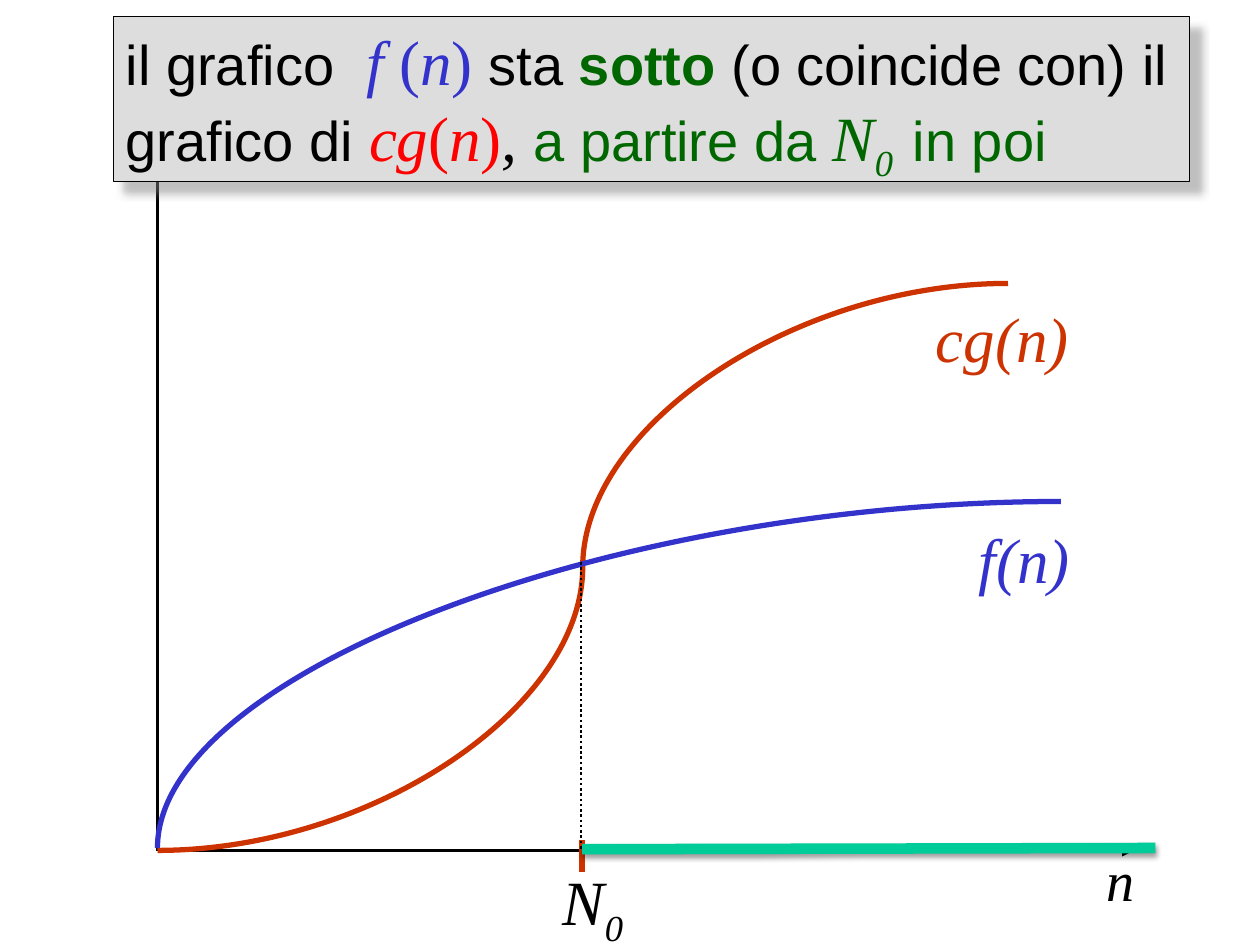
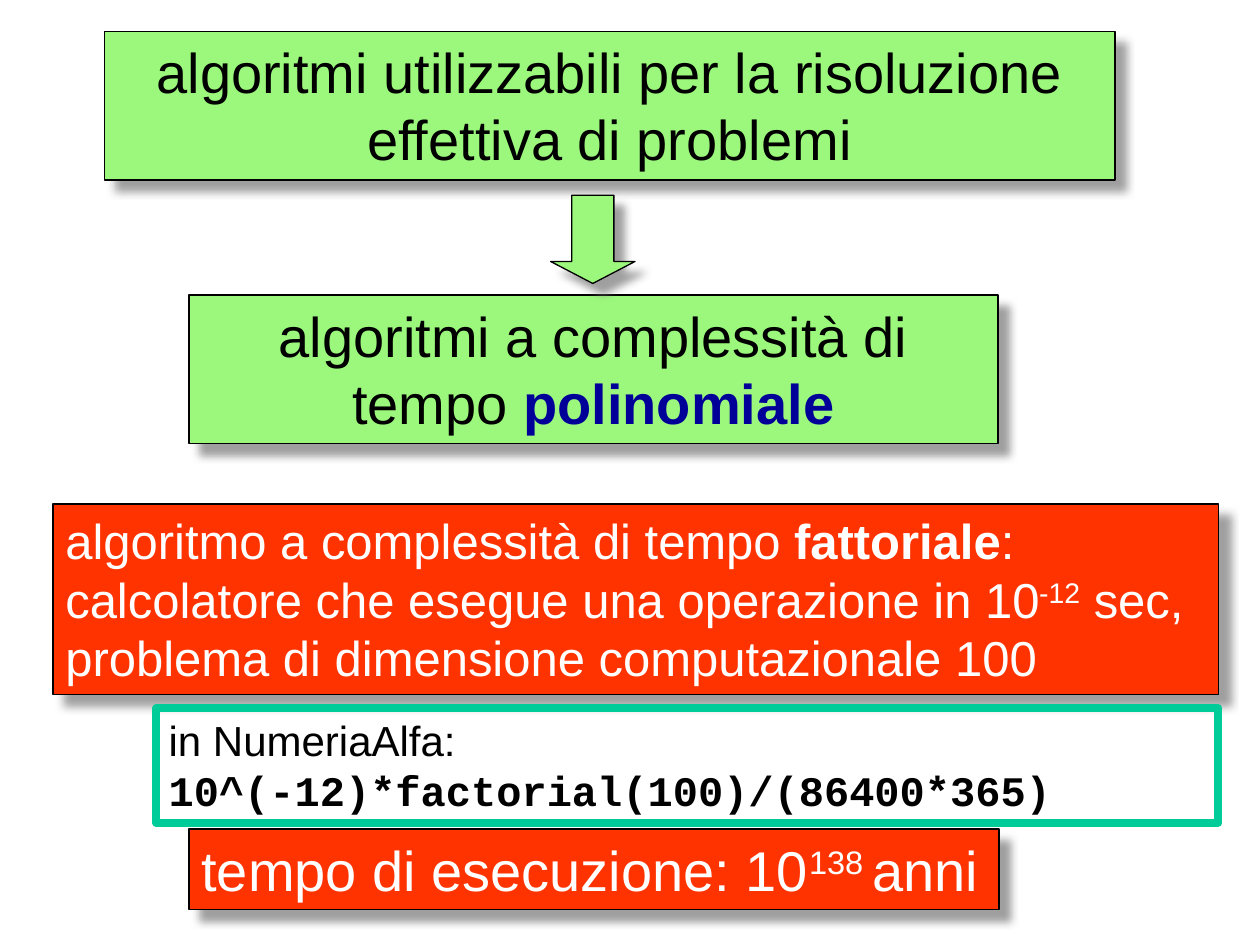
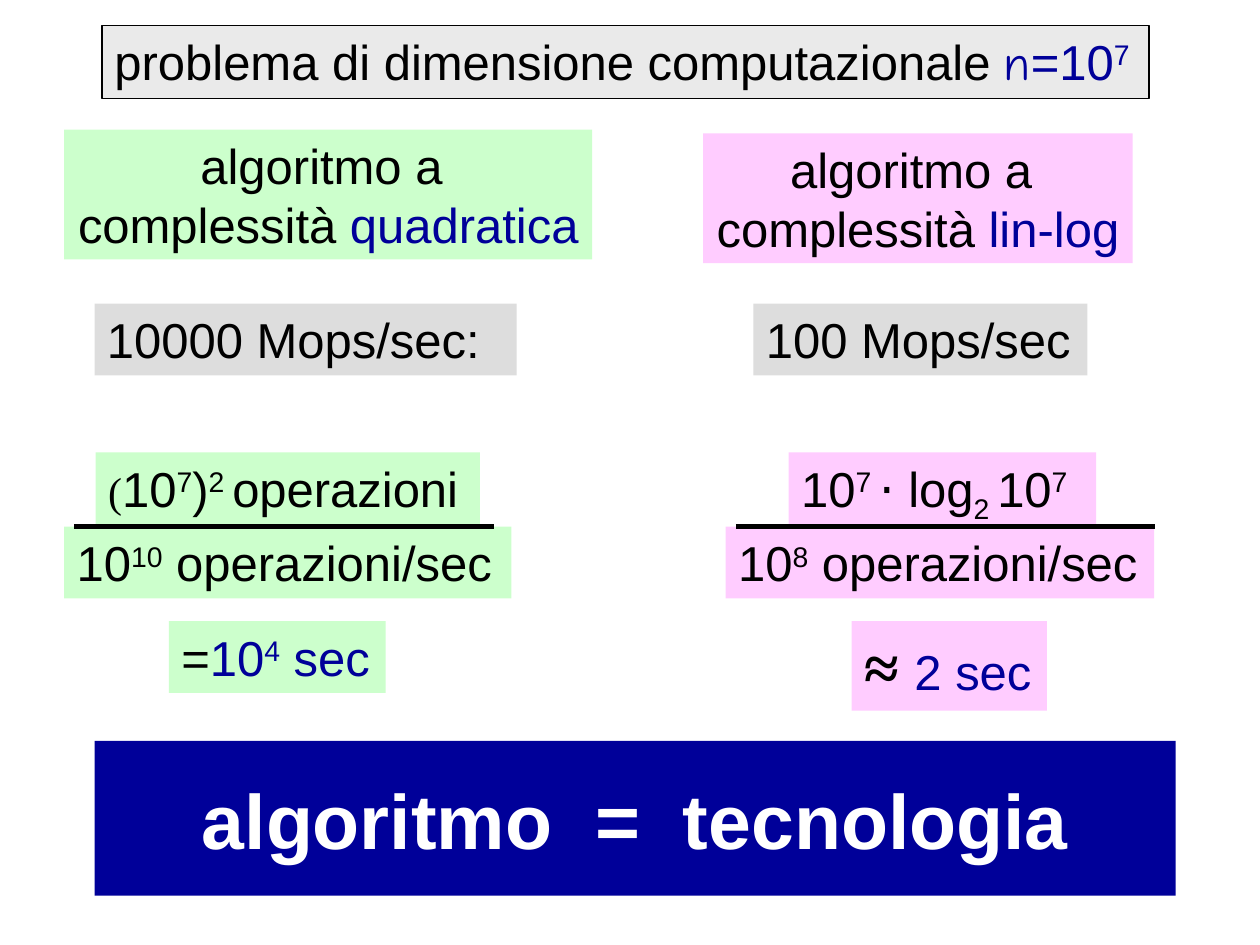
"""Build three slides on algorithm complexity: growth curves, time classes and a comparison."""
from dataclasses import dataclass

from lxml import etree
from pptx import Presentation
from pptx.dml.color import RGBColor
from pptx.enum.dml import MSO_LINE
from pptx.enum.shapes import MSO_CONNECTOR, MSO_SHAPE
from pptx.enum.text import MSO_ANCHOR, MSO_AUTO_SIZE, PP_ALIGN
from pptx.oxml.ns import qn
from pptx.util import Inches, Pt

RECTANGLE, DOWN_ARROW = MSO_SHAPE.RECTANGLE, MSO_SHAPE.DOWN_ARROW
STRAIGHT, CURVE = MSO_CONNECTOR.STRAIGHT, MSO_CONNECTOR.CURVE
LEFT, CENTER = PP_ALIGN.LEFT, PP_ALIGN.CENTER
TOP, MIDDLE = MSO_ANCHOR.TOP, MSO_ANCHOR.MIDDLE
FIT, FIXED = MSO_AUTO_SIZE.SHAPE_TO_FIT_TEXT, MSO_AUTO_SIZE.NONE
DOTTED = MSO_LINE.ROUND_DOT

BLACK = RGBColor(0x00, 0x00, 0x00)
WHITE = RGBColor(0xFF, 0xFF, 0xFF)
GRAY = RGBColor(0xDD, 0xDD, 0xDD)
PALE_GRAY = RGBColor(0xEA, 0xEA, 0xEA)
BLUE = RGBColor(0x33, 0x33, 0xCC)
NAVY = RGBColor(0x00, 0x00, 0x99)
RED = RGBColor(0xFF, 0x00, 0x00)
RUST = RGBColor(0xCC, 0x33, 0x00)
ORANGE = RGBColor(0xFF, 0x33, 0x00)
GREEN = RGBColor(0x00, 0x66, 0x00)
TEAL = RGBColor(0x00, 0xCC, 0x99)
LIME = RGBColor(0x9C, 0xF8, 0x7C)
MINT = RGBColor(0xCC, 0xFF, 0xCC)
PINK = RGBColor(0xFF, 0xCC, 0xFF)

SANS, SERIF, MONO, COMIC = "Arial", "Times New Roman", "Courier New", "Comic Neue"
SUPER, SUB = 30, -25
SOFT_SHADOW = ("808080", 50, 5, 8.5, 45)
DEEP_SHADOW = ("808080", 75, 5, 8.5, 45)
LINE_SHADOW = ("000000", 38, 3.1, 1.6, 90)


@dataclass
class Run:
    text: str
    size: float = 28
    color: RGBColor = BLACK
    font: str = SANS
    bold: bool = False
    italic: bool = False
    base: int = 0
    spread: float = 0


def formula(text, color=BLACK, size=36, italic=True, **style):
    return Run(text, size, color, SERIF, italic=italic, **style)


class Deck:
    def __init__(self):
        self.prs = Presentation()
        self.prs.slide_width, self.prs.slide_height = Inches(10), Inches(7.5)
        self.slide = None

    def new_slide(self):
        self.slide = self.prs.slides.add_slide(self.prs.slide_layouts[6])

    def fill_text(self, shape, paragraphs, align, wrap, anchor, fit):
        frame = shape.text_frame
        frame.word_wrap, frame.vertical_anchor, frame.auto_size = wrap, anchor, fit
        for index, runs in enumerate(paragraphs):
            paragraph = frame.add_paragraph() if index else frame.paragraphs[0]
            paragraph.alignment = align
            for item in runs:
                run = paragraph.add_run()
                run.text = item.text
                font = run.font
                font.size, font.name = Pt(item.size), item.font
                font.bold, font.italic = item.bold, item.italic
                font.color.rgb = item.color
                properties = run._r.get_or_add_rPr()
                if item.base:
                    properties.set("baseline", str(item.base * 1000))
                if item.spread:
                    properties.set("spc", str(round(item.spread * 100)))

    def cast_shadow(self, effects, shadow):
        color, alpha, blur, distance, angle = shadow
        outer = etree.SubElement(effects, qn("a:outerShdw"), blurRad=str(Pt(blur)),
                                 dist=str(Pt(distance)), dir=str(angle * 60000),
                                 algn="ctr", rotWithShape="0")
        tint = etree.SubElement(outer, qn("a:srgbClr"), val=color)
        etree.SubElement(tint, qn("a:alpha"), val=str(alpha * 1000))

    def box(self, place, *paragraphs, fill=None, line=None, width=0.75, shadow=None,
            align=LEFT, wrap=True, anchor=TOP, fit=FIT, kind=RECTANGLE):
        shape = self.slide.shapes.add_shape(kind, *map(Inches, place))
        shape.shadow.inherit = False
        if fill is None:
            shape.fill.background()
        else:
            shape.fill.solid()
            shape.fill.fore_color.rgb = fill
        if line is None:
            shape.line.fill.background()
        else:
            shape.line.color.rgb, shape.line.width = line, Pt(width)
        if shadow:
            self.cast_shadow(shape._element.spPr.find(qn("a:effectLst")), shadow)
        if paragraphs:
            self.fill_text(shape, paragraphs, align, wrap, anchor, fit)
        return shape

    def label(self, place, *runs):
        textbox = self.slide.shapes.add_textbox(*map(Inches, place))
        self.fill_text(textbox, [runs], LEFT, False, TOP, FIT)

    def line(self, start, end, color=BLACK, width=3, kind=STRAIGHT, dash=None,
             arrow=None, shadow=None):
        connector = self.slide.shapes.add_connector(kind, *map(Inches, start + end))
        connector.line.color.rgb, connector.line.width = color, Pt(width)
        if dash:
            connector.line.dash_style = dash
        properties = connector._element.spPr
        if arrow:
            etree.SubElement(properties.find(qn("a:ln")), qn(arrow), type="triangle")
        effects = etree.SubElement(properties, qn("a:effectLst"))
        if shadow:
            self.cast_shadow(effects, shadow)
        return connector

    def quarter_curve(self, start, end, color):
        """Draw a curve that leaves start upwards and reaches end level."""
        (x1, y1), (x2, y2) = start, end
        mid_x, mid_y = (x1 + x2) / 2, (y1 + y2) / 2
        half_w, half_h = (y1 - y2) / 2, (x2 - x1) / 2
        curve = self.line((mid_x - half_w, mid_y - half_h),
                          (mid_x + half_w, mid_y + half_h), color, kind=CURVE)
        properties = curve._element.spPr
        properties.find(qn("a:prstGeom")).set("prst", "curvedConnector2")
        properties.find(qn("a:xfrm")).set("rot", str(270 * 60000))


def growth_slide(deck):
    deck.new_slide()
    origin, threshold = (1.25, 6.75), 4.62
    deck.line((1.25, 1.33), origin, width=2.25, arrow="a:headEnd")
    deck.line(origin, (9, 6.75), width=2.25, arrow="a:tailEnd")
    deck.box((0.9, 0.13, 8.54, 1.31), [
        Run("il grafico", 32), formula(" ", spread=9), formula("f ", BLUE),
        formula("(", BLUE, italic=False), formula("n", BLUE),
        formula(") ", BLUE, italic=False),
        Run("sta ", 32), Run("sotto", 32, GREEN, bold=True),
        Run(" (o coincide con) il grafico di", 32), formula(" ", italic=False),
        formula("cg", RED), formula("(", RED, italic=False), formula("n", RED),
        formula(")", RED, italic=False), formula(", "), Run("a partire da", 32, GREEN),
        formula(" N", GREEN), formula("0", GREEN, base=SUB),
        formula(" ", GREEN, base=SUB, spread=6), Run("in poi", 32, GREEN),
    ], fill=GRAY, line=BLACK, shadow=SOFT_SHADOW)
    deck.line(origin, (8, 2.25), RUST, kind=CURVE)
    deck.quarter_curve((1.25, 6.73), (8.42, 3.98), BLUE)
    deck.label((7.33, 2.33, 1.26, 0.7), formula("cg(n)", RUST))
    deck.label((7.67, 4.08, 0.92, 0.7), formula("f(n)", BLUE))
    deck.label((4.37, 6.8, 0.7, 0.7), formula("N"), formula("0", base=SUB))
    deck.line((threshold, 6.67), (threshold, 6.92), RUST)
    deck.line((4.61, 4.46), (4.61, 6.74), width=1.5, dash=DOTTED)
    deck.label((8.68, 6.66, 0.42, 0.63), formula("n", size=32))
    deck.line((threshold, 6.74), (9.17, 6.73), TEAL, 6, shadow=LINE_SHADOW)


def time_classes_slide(deck):
    deck.new_slide()
    usable = dict(fill=LIME, line=BLACK, shadow=DEEP_SHADOW, align=CENTER)
    unusable = dict(fill=ORANGE, line=BLACK, shadow=DEEP_SHADOW)
    deck.box((1.5, 2.34, 6.42, 1.18), [
        Run("algoritmi a complessità di tempo ", 32),
        Run("polinomiale", 32, NAVY, bold=True)], **usable)
    deck.box((0.42, 4, 9.25, 1.51), [
        Run("algoritmo a complessità di tempo ", color=WHITE),
        Run("fattoriale", color=WHITE, bold=True),
        Run(": calcolatore che esegue una operazione in 10", color=WHITE),
        Run("-12", color=WHITE, base=SUPER),
        Run(" sec, problema di dimensione computazionale 100", color=WHITE)], **unusable)
    deck.box((1.5, 6.58, 6.43, 0.64), [
        Run("tempo di esecuzione: 10", 32, WHITE), Run("138 ", 32, WHITE, base=SUPER),
        Run("anni", 32, WHITE)], wrap=False, **unusable)
    deck.box((0.83, 0.25, 8.02, 1.18), [
        Run("algoritmi utilizzabili per la risoluzione effettiva di problemi", 32)], **usable)
    implication = deck.box((4.37, 1.55, 0.67, 0.7), kind=DOWN_ARROW, **usable)
    implication.adjustments[1] = 0.26
    deck.box((1.24, 5.62, 8.43, 0.91), [Run("in NumeriaAlfa:", 24)],
             [Run("10^(-12)*factorial(100)/(86400*365)", 24, font=MONO, bold=True)],
             line=TEAL, width=4.5)


def comparison_slide(deck):
    deck.new_slide()
    deck.box((0.81, 0.2, 8.31, 0.58), [
        Run("problema di dimensione computazionale "), Run("n", color=NAVY, font=COMIC),
        Run("=10", color=NAVY), Run("7", color=NAVY, base=SUPER)],
        fill=PALE_GRAY, line=BLACK, wrap=False)
    for place, tint, name in (((0.51, 1.03, 4.19, 1.03), MINT, "quadratica"),
                              ((5.58, 1.06, 3.41, 1.03), PINK, "lin-log")):
        deck.box(place, [Run("algoritmo a ")], [Run("complessità "), Run(name, color=NAVY)],
                 fill=tint, align=CENTER, wrap=False)
    deck.box((0.75, 2.41, 3.35, 0.57), [Run("10000 Mops/sec:")], fill=GRAY)
    deck.box((5.98, 2.41, 2.65, 0.57), [Run("100 Mops/sec")], fill=GRAY, wrap=False)

    lin_log = [Run("10"), Run("7 ", base=SUPER), Run("⋅ log"), Run("2 ", base=SUB),
               Run("10"), Run("7", base=SUPER), formula(" ", size=24, italic=False)]
    quadratic = [formula("(", size=24, italic=False), Run("10"), Run("7", base=SUPER),
                 Run(")"), Run("2 ", base=SUPER), Run("operazioni")]
    about_two = [Run("≈ ", 36, font=SERIF, bold=True), Run("2 sec", color=NAVY)]
    ten_thousand = [Run("="), Run("10", color=NAVY), Run("4", color=NAVY, base=SUPER),
                    Run(" sec", color=NAVY)]
    for tint, left, operations, op_left, op_width, power, rate_width, result, result_place in (
            (PINK, 5.76, lin_log, 6.26, 2.44, "8", 3.4, about_two, (6.76, 4.93, 1.55, 0.71)),
            (MINT, 0.51, quadratic, 0.76, 3.05, "10", 3.55, ten_thousand,
             (1.34, 4.93, 1.72, 0.57))):
        deck.box((op_left, 3.59, op_width, 0.57), operations, fill=tint, wrap=False)
        deck.box((left, 4.18, rate_width, 0.57), [
            Run("10"), Run(power, base=SUPER), Run(" operazioni/sec")], fill=tint, wrap=False)
        deck.box(result_place, result, fill=tint, wrap=False)
        deck.line((left + 0.08, 4.18), (left + 3.41, 4.18))

    motto = dict(size=44, color=WHITE, bold=True)
    deck.box((0.75, 5.88, 8.58, 1.23), [
        Run("algoritmo", **motto), Run(" ", spread=12, **motto), Run("=", **motto),
        Run(" ", spread=12, **motto), Run("tecnologia", **motto)],
        fill=NAVY, align=CENTER, anchor=MIDDLE, fit=FIXED)


def main():
    deck = Deck()
    growth_slide(deck)
    time_classes_slide(deck)
    comparison_slide(deck)
    deck.prs.save("out.pptx")


if __name__ == "__main__":
    main()
